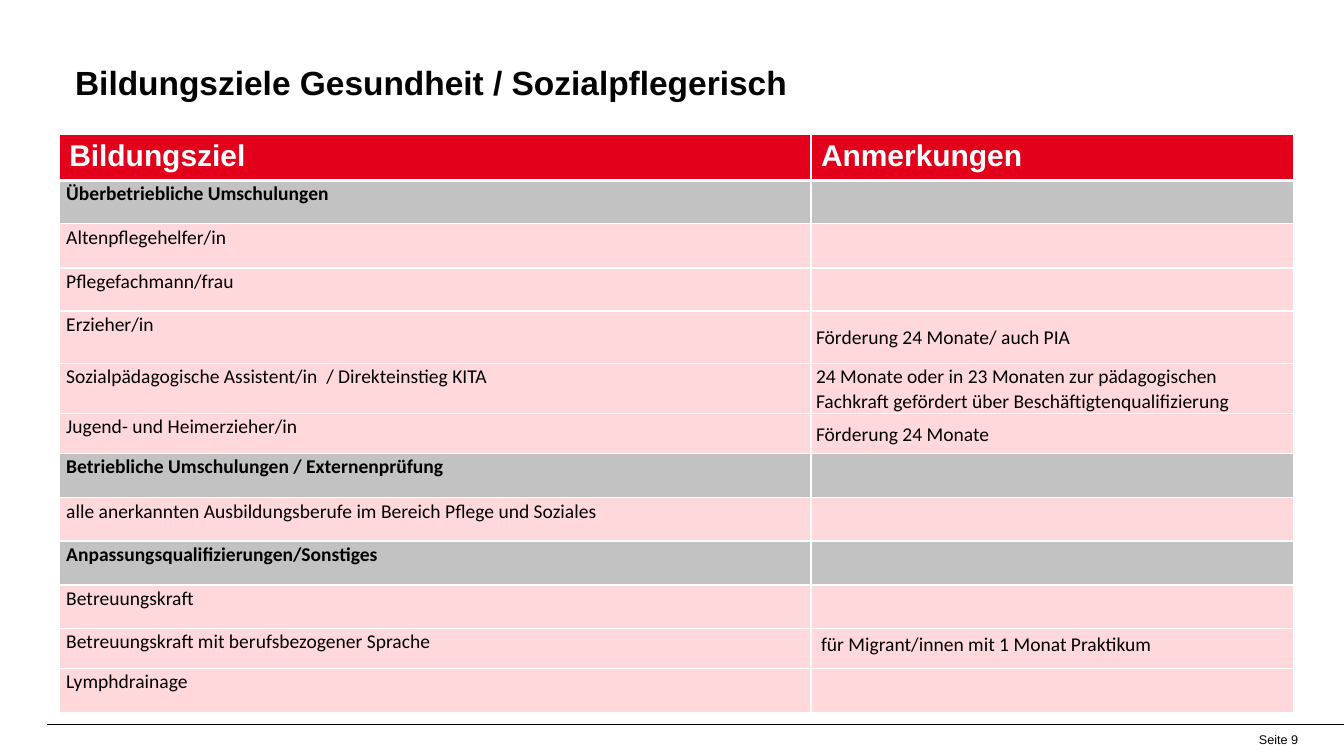
from dataclasses import dataclass

from lxml.etree import SubElement
from pptx import Presentation
from pptx.dml.color import RGBColor as Rgb
from pptx.enum.shapes import MSO_CONNECTOR as Link
from pptx.enum.text import MSO_ANCHOR as Anchor, PP_ALIGN as Align
from pptx.oxml.ns import qn
from pptx.util import Inches, Pt


@dataclass(frozen=True)
class Theme:
    """Colours, fonts and type sizes of the slide."""
    black: str = "000000"
    white: str = "FFFFFF"
    red: str = "E2001A"
    gray: str = "C2C2C2"
    pink: str = "FFD8DC"
    sans: str = "Arial"
    body: str = "Calibri"
    title: float = 24
    head: float = 21.5
    text: float = 14
    foot: float = 9


@dataclass(frozen=True)
class Goal:
    """One table row: height, goal, note, and how each is set."""
    height: float
    name: str
    note: str = ""
    group: bool = False
    inset: bool = True


THEME = Theme()
COLS = (7.49, 4.81)
HEAD = ("Bildungsziel", "Anmerkungen")
HEAD_HEIGHT = 0.43
GOALS = (
    Goal(0.43, "Überbetriebliche Umschulungen", group=True),
    Goal(0.44, "Altenpflegehelfer/in"),
    Goal(0.43, "Pflegefachmann/frau"),
    Goal(0.52, "Erzieher/in", "Förderung 24 Monate/ auch PIA"),
    Goal(0.5, "Sozialpädagogische Assistent/in  / Direkteinstieg KITA",
         "24 Monate oder in 23 Monaten zur pädagogischen Fachkraft "
         "gefördert über Beschäftigtenqualifizierung"),
    Goal(0.4, "Jugend- und Heimerzieher/in", "Förderung 24 Monate"),
    Goal(0.44, "Betriebliche Umschulungen / Externenprüfung", group=True),
    Goal(0.43, "alle anerkannten Ausbildungsberufe im Bereich Pflege und Soziales"),
    Goal(0.44, "Anpassungsqualifizierungen/Sonstiges", group=True),
    Goal(0.43, "Betreuungskraft"),
    Goal(0.4, "Betreuungskraft mit berufsbezogener Sprache",
         "für Migrant/innen mit 1 Monat Praktikum", inset=False),
    Goal(0.44, "Lymphdrainage"),
)


def write(para, text, size, face, color=THEME.black, bold=False):
    """Add one styled run to a paragraph."""
    run = para.add_run()
    run.text = text
    font = run.font
    font.size, font.name, font.bold = Pt(size), face, bold
    font.color.rgb = Rgb.from_string(color)


def add_label(slide, box, text, size, bold=False, align=Align.LEFT):
    """Add a vertically centred text box."""
    frame = slide.shapes.add_textbox(*map(Inches, box)).text_frame
    frame.word_wrap = True
    frame.vertical_anchor = Anchor.MIDDLE
    para = frame.paragraphs[0]
    para.alignment = align
    write(para, text, size, THEME.sans, bold=bold)


def add_rule(slide, left, right, top):
    """Add a thin horizontal line."""
    line = slide.shapes.add_connector(
        Link.STRAIGHT, Inches(left), Inches(top), Inches(right), Inches(top))
    line.line.width = Pt(0.5)
    line.line.color.rgb = Rgb.from_string(THEME.black)
    SubElement(line._element.spPr, qn("a:effectLst"))


def paint(cell, color, top=1, bottom=1):
    """Set the white borders and the fill of a cell."""
    props = cell._tc.get_or_add_tcPr()
    for side, width in zip("LRTB", (1, 1, top, bottom)):
        edge = SubElement(props, qn(f"a:ln{side}"), w=str(Pt(width)))
        fill = SubElement(edge, qn("a:solidFill"))
        SubElement(fill, qn("a:srgbClr"), val=THEME.white)
    cell.fill.solid()
    cell.fill.fore_color.rgb = Rgb.from_string(color)


def fill_cell(cell, text, side=None, bold=False):
    """Write body text, with tight margins when a side inset is given."""
    para = cell.text_frame.paragraphs[0]
    if side is not None:
        cell.margin_left = cell.margin_right = Inches(side)
        cell.margin_top = cell.margin_bottom = 0
        para.line_spacing = 1.07
    write(para, text, THEME.text, THEME.body, bold=bold)


def add_goals(slide, left, top):
    """Add the table of goals and notes."""
    heights = [HEAD_HEIGHT, *(goal.height for goal in GOALS)]
    table = slide.shapes.add_table(
        len(heights), len(COLS), Inches(left), Inches(top),
        Inches(sum(COLS)), Inches(sum(heights))).table
    table.first_row = table.horz_banding = False
    for col, width in zip(table.columns, COLS):
        col.width = Inches(width)
    for row, height in zip(table.rows, heights):
        row.height = Inches(height)
    for cell, text in zip(table.rows[0].cells, HEAD):
        paint(cell, THEME.red, bottom=3)
        write(cell.text_frame.paragraphs[0], text, THEME.head, THEME.sans,
              THEME.white, True)
    for num, goal in enumerate(GOALS, 1):
        name, note = table.cell(num, 0), table.cell(num, 1)
        for cell in (name, note):
            paint(cell, THEME.gray if goal.group else THEME.pink,
                  top=3 if num == 1 else 1)
        fill_cell(name, goal.name, 0.07, goal.group)
        if goal.note:
            fill_cell(note, goal.note, 0.05 if goal.inset else None)
            if goal.inset:
                note.vertical_anchor = Anchor.MIDDLE


def main():
    """Build and save the slide."""
    deck = Presentation()
    deck.slide_width, deck.slide_height = Inches(13.39), Inches(7.53)
    slide = deck.slides.add_slide(deck.slide_layouts[6])
    add_rule(slide, 0.47, 13.39, 7.22)
    add_label(slide, (0.65, 0.58, 12.27, 0.48),
              "Bildungsziele Gesundheit / Sozialpflegerisch", THEME.title, True)
    add_label(slide, (12.09, 7.22, 0.94, 0.3), "Seite 9", THEME.foot,
              align=Align.RIGHT)
    add_goals(slide, 0.59, 1.34)
    deck.save("out.pptx")


if __name__ == "__main__":
    main()
